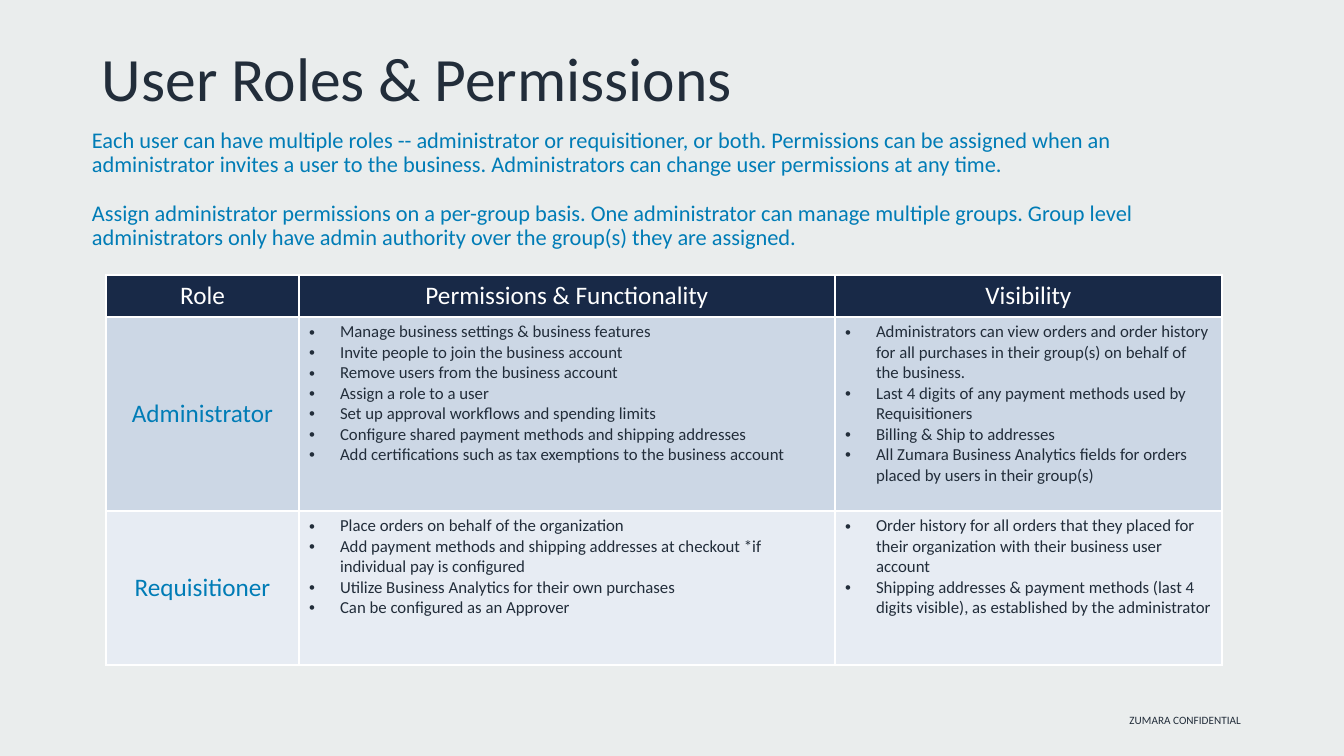
from lxml import etree
from pptx import Presentation
from pptx.dml.color import RGBColor
from pptx.enum import text
from pptx.oxml.ns import qn
from pptx.util import Emu, Pt

SCALE = 12192000 / 1344
FONT = "Calibri"
INK = {"back": "EAEDED", "dark": "222D3A", "blue": "007CB6", "white": "FFFFFF",
       "head": "182947", "admin": "CCD7E5", "buyer": "E7ECF3"}
LEFT, MID, RIGHT = text.PP_ALIGN.LEFT, text.PP_ALIGN.CENTER, text.PP_ALIGN.RIGHT
TOP, CENTER = text.MSO_ANCHOR.TOP, text.MSO_ANCHOR.MIDDLE

INTRO = [
    "Each user can have multiple roles -- administrator or requisitioner, or both. "
    "Permissions can be assigned when an administrator invites a user to the business. "
    "Administrators can change user permissions at any time.",
    "Assign administrator permissions on a per-group basis. One administrator can manage "
    "multiple groups. Group level administrators only have admin authority over the "
    "group(s) they are assigned.",
]
HEADS = ["Role", "Permissions & Functionality", "Visibility"]
ROLES = [
    ("Administrator", "admin", [
        "Manage business settings & business features",
        "Invite people to join the business account",
        "Remove users from the business account",
        "Assign a role to a user",
        "Set up approval workflows and spending limits",
        "Configure shared payment methods and shipping addresses",
        "Add certifications such as tax exemptions to the business account",
    ], [
        "Administrators can view orders and order history for all purchases in their "
        "group(s) on behalf of the business.",
        "Last 4 digits of any payment methods used by Requisitioners",
        "Billing & Ship to addresses",
        "All Zumara Business Analytics fields for orders placed by users in their group(s)",
    ]),
    ("Requisitioner", "buyer", [
        "Place orders on behalf of the organization",
        "Add payment methods and shipping addresses at checkout *if individual pay is configured",
        "Utilize Business Analytics for their own purchases",
        "Can be configured as an Approver",
    ], [
        "Order history for all orders that they placed for their organization with their "
        "business user account",
        "Shipping addresses & payment methods (last 4 digits visible), as established by "
        "the administrator",
    ]),
]


def px(n):
    return Emu(round(n * SCALE))


def color(name):
    return RGBColor.from_string(INK[name])


def bullet(para):
    props = para._p.get_or_add_pPr()
    props.set("marL", str(px(31)))
    props.set("indent", str(px(-31)))
    etree.SubElement(props, qn("a:buFont")).set("typeface", "Arial")
    etree.SubElement(props, qn("a:buChar")).set("char", "•")


def write(frame, lines, size=12, ink="dark", align=LEFT, line=None, gap=0, dots=False):
    frame.word_wrap = True
    for i, words in enumerate(lines):
        para = frame.add_paragraph() if i else frame.paragraphs[0]
        if dots:
            bullet(para)
        para.alignment = align
        if line:
            para.line_spacing = line
        if i and gap:
            para.space_before = Pt(gap)
        run = para.add_run()
        run.text = words
        run.font.name = FONT
        run.font.size = Pt(size)
        run.font.color.rgb = color(ink)


def box(slide, x, y, w, h, lines, anchor=TOP, inset=None, **style):
    frame = slide.shapes.add_textbox(px(x), px(y), px(w), px(h)).text_frame
    frame.vertical_anchor = anchor
    if inset is not None:
        frame.margin_left = frame.margin_right = px(inset)
        frame.margin_top = frame.margin_bottom = px(inset)
    write(frame, lines, **style)


def border(cell):
    props = cell._tc.get_or_add_tcPr()
    for i, side in enumerate(("lnL", "lnR", "lnT", "lnB")):
        edge = etree.Element(qn("a:" + side), w=str(Pt(1)))
        fill = etree.SubElement(edge, qn("a:solidFill"))
        etree.SubElement(fill, qn("a:srgbClr")).set("val", INK["white"])
        props.insert(i, edge)


def fill(cell, back, lines, anchor=TOP, **style):
    cell.fill.solid()
    cell.fill.fore_color.rgb = color(back)
    cell.vertical_anchor = anchor
    border(cell)
    write(cell.text_frame, lines, **style)


def grid(slide, x, y, cols, rows):
    table = slide.shapes.add_table(len(rows), len(cols), px(x), px(y),
                                   px(sum(cols)), px(sum(rows))).table
    for col, w in zip(table.columns, cols):
        col.width = px(w)
    for row, h in zip(table.rows, rows):
        row.height = px(h)
    return table


def main():
    deck = Presentation()
    deck.slide_width, deck.slide_height = px(1344), px(756)
    slide = deck.slides.add_slide(deck.slide_layouts[6])
    slide.background.fill.solid()
    slide.background.fill.fore_color.rgb = color("back")

    box(slide, 920, 708, 331, 24, ["ZUMARA CONFIDENTIAL"], size=8, align=RIGHT)
    box(slide, 92, 9, 1283, 146, ["User Roles & Permissions"], anchor=CENTER,
        size=44, line=0.9)
    box(slide, 92, 129, 1145, 141, INTRO, inset=0, size=16, ink="blue",
        line=0.9, gap=17.5)

    table = grid(slide, 106, 275, [193, 536, 387], [42, 194, 154])
    for i, head in enumerate(HEADS):
        fill(table.cell(0, i), "head", [head], size=18, ink="white", align=MID)
    for r, (role, back, rights, views) in enumerate(ROLES, 1):
        fill(table.cell(r, 0), back, [role], anchor=CENTER, size=18, ink="blue", align=MID)
        for c, items in enumerate((rights, views), 1):
            fill(table.cell(r, c), back, items, dots=True)

    deck.save("out.pptx")


if __name__ == "__main__":
    main()
